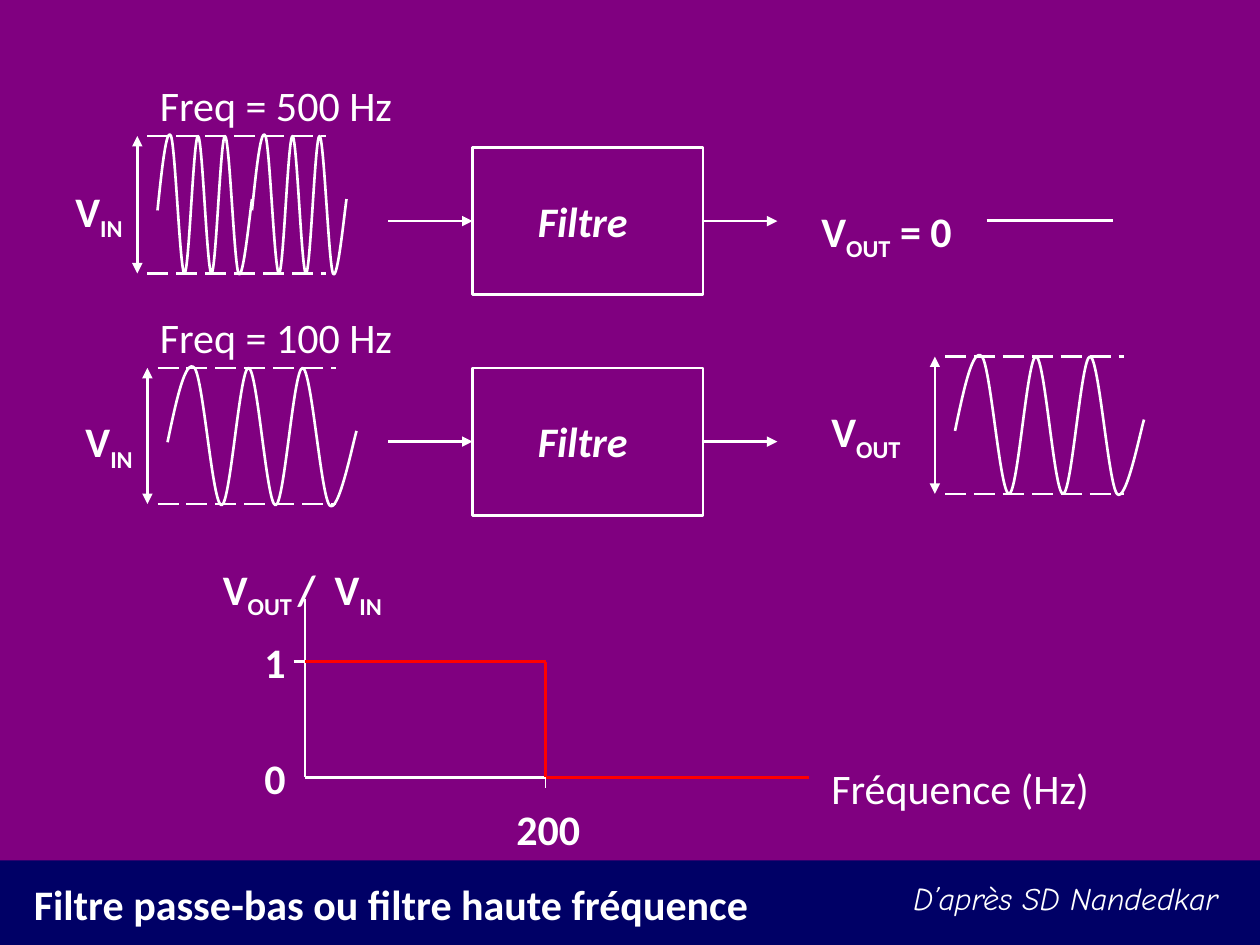
from dataclasses import dataclass

from lxml import etree
from pptx import Presentation
from pptx.dml.color import RGBColor
from pptx.enum.dml import MSO_LINE
from pptx.enum.shapes import MSO_CONNECTOR, MSO_SHAPE
from pptx.enum.text import MSO_AUTO_SIZE
from pptx.oxml.ns import qn
from pptx.util import Inches, Pt

STRAIGHT = MSO_CONNECTOR.STRAIGHT
RECTANGLE = MSO_SHAPE.RECTANGLE
LONG_DASH = MSO_LINE.LONG_DASH
GROW = MSO_AUTO_SIZE.SHAPE_TO_FIT_TEXT
WHITE, RED, PURPLE, NAVY = "FFFFFF", "FF0000", "800080", "000066"
LEFT_SIDE, RIGHT_SIDE = 1, 3
FILTER_HEIGHT = 1.17
WAVE_START = 0.67
HALF_CYCLES = 7
WAVE_CURVES = [
    ((0.33, 0.33), (0.67, 0), (1, 0.08)),
    ((1.33, 0.17), (1.67, 1.17), (2, 1.17)),
    ((2.33, 1.17), (2.67, 0.08), (3, 0.08)),
    ((3.33, 0.08), (3.67, 1.17), (4, 1.17)),
    ((4.33, 1.17), (4.67, 0.08), (5, 0.08)),
    ((5.33, 0.08), (5.67, 1.08), (6, 1.17)),
    ((6.33, 1.25), (6.86, 0.68), (7, 0.58)),
]


@dataclass
class TextRun:
    """A piece of a label, normal or subscript."""

    text: str
    subscript: bool = False


@dataclass
class Label:
    """A text box with its place and type style."""

    left: float
    top: float
    width: float
    runs: list[TextRun]
    height: float = 0.5
    bold: bool = True
    italic: bool = False
    size: int = 24
    font: str = "Calibri"
    wrap: bool = True


@dataclass
class Signal:
    """A wave between dashed limits with an amplitude arrow."""

    left: float
    top: float
    bottom: float
    waves: int = 1


@dataclass
class Segment:
    """A straight line with its colour and weight."""

    start: tuple[float, float]
    end: tuple[float, float]
    color: str = WHITE
    weight: float = 1.5


def color_of(value: str) -> RGBColor:
    """Turn a hex string into a colour."""
    return RGBColor.from_string(value)


def style_line(line, color: str = WHITE, weight: float = 1.5) -> None:
    """Set the colour and weight of a line."""
    line.color.rgb = color_of(color)
    line.width = Pt(weight)


def add_line(slide, segment: Segment, ends: tuple[str, ...] = (), dashed: bool = False):
    """Draw a straight connector with optional arrowheads and dashes."""
    points = [Inches(value) for value in (*segment.start, *segment.end)]
    connector = slide.shapes.add_connector(STRAIGHT, *points)
    style_line(connector.line, segment.color, segment.weight)
    if dashed:
        connector.line.dash_style = LONG_DASH
    properties = connector.line._get_or_add_ln()
    for end in ends:
        etree.SubElement(properties, qn(f"a:{end}"), type="triangle")
    etree.SubElement(connector._element.spPr, qn("a:effectLst"))
    return connector


def add_label(slide, label: Label) -> None:
    """Write a label run by run."""
    place = (label.left, label.top, label.width, label.height)
    box = slide.shapes.add_textbox(*map(Inches, place))
    box.text_frame.word_wrap = label.wrap
    box.text_frame.auto_size = GROW
    paragraph = box.text_frame.paragraphs[0]
    for part in label.runs:
        run = paragraph.add_run()
        run.text = part.text
        run.font.name = label.font
        run.font.size = Pt(label.size)
        run.font.bold = label.bold
        run.font.italic = label.italic
        run.font.color.rgb = color_of(WHITE)
        if part.subscript:
            run._r.get_or_add_rPr().set("baseline", "-25000")


def bend_segments(shape) -> None:
    """Turn each three straight segments of an outline into one cubic curve."""
    outline = next(shape._element.iter(qn("a:path")))
    segments = outline.findall(qn("a:lnTo"))
    for first in range(0, len(segments), 3):
        curve = etree.SubElement(outline, qn("a:cubicBezTo"))
        for segment in segments[first : first + 3]:
            curve.append(segment[0])
            outline.remove(segment)


def add_wave(shapes, left: float, top: float, width: float) -> None:
    """Draw one open wave."""
    scale = width / HALF_CYCLES
    builder = shapes.build_freeform(Inches(left), Inches(top + WAVE_START))
    points = [
        (Inches(left + x * scale), Inches(top + y))
        for curve in WAVE_CURVES
        for x, y in curve
    ]
    builder.add_line_segments(points, close=False)
    wave = builder.convert_to_shape()
    bend_segments(wave)
    wave.shadow.inherit = False
    wave.fill.background()
    style_line(wave.line)


def add_signal(slide, signal: Signal) -> None:
    """Draw the limits, the amplitude arrow and the waves."""
    left, top, bottom = signal.left, signal.top, signal.bottom
    for y in (top, bottom):
        add_line(slide, Segment((left, y), (left + 1.42, y)), dashed=True)
    arrow = Segment((left - 0.08, top), (left - 0.08, bottom))
    add_line(slide, arrow, ends=("headEnd", "tailEnd"))
    shapes = slide.shapes
    if signal.waves > 1:
        shapes = shapes.add_group_shape().shapes
    width = 1.5 / signal.waves
    for index in range(signal.waves):
        add_wave(shapes, left + 0.08 + index * width, top - 0.08, width)


def add_rectangle(slide, left: float, top: float, width: float, height: float):
    """Add a rectangle without a shadow."""
    place = map(Inches, (left, top, width, height))
    rectangle = slide.shapes.add_shape(RECTANGLE, *place)
    rectangle.shadow.inherit = False
    return rectangle


def add_filter(slide, top: float, label_width: float) -> None:
    """Draw a filter box with its input and output arrows."""
    box = add_rectangle(slide, 3.75, top, 1.83, FILTER_HEIGHT)
    box.fill.background()
    style_line(box.line)
    middle = top + FILTER_HEIGHT / 2
    tail = ("tailEnd",)
    incoming = add_line(slide, Segment((3.08, middle), (3.75, middle)), ends=tail)
    incoming.end_connect(box, LEFT_SIDE)
    outgoing = add_line(slide, Segment((5.58, middle), (6.17, middle)), ends=tail)
    outgoing.begin_connect(box, RIGHT_SIDE)
    name = [TextRun("Filtre")]
    add_label(slide, Label(4.17, top + 0.33, label_width, name, italic=True))


def main() -> None:
    """Build the low-pass filter slide."""
    presentation = Presentation()
    presentation.slide_width, presentation.slide_height = Inches(10), Inches(7.5)
    slide = presentation.slides.add_slide(presentation.slide_layouts[6])
    slide.background.fill.solid()
    slide.background.fill.fore_color.rgb = color_of(NAVY)
    panel = add_rectangle(slide, 0, 0, 10, 6.83)
    panel.fill.solid()
    panel.fill.fore_color.rgb = color_of(PURPLE)
    panel.line.fill.background()

    add_filter(slide, 1.17, 1.24)
    add_filter(slide, 2.92, 1.32)
    for signal in (
        Signal(1.17, 1.08, 2.17, waves=2),
        Signal(1.25, 2.92, 4),
        Signal(7.5, 2.83, 3.92),
    ):
        add_signal(slide, signal)
    for segment in (
        Segment((7.83, 1.75), (8.83, 1.75)),
        Segment((2.42, 4.75), (2.42, 6.17)),
        Segment((2.42, 6.17), (6.42, 6.17)),
        Segment((2.33, 5.25), (2.5, 5.25)),
        Segment((4.33, 6.08), (4.33, 6.25), weight=0.75),
        Segment((4.33, 6.17), (4.33, 5.25), RED),
        Segment((2.42, 5.25), (4.33, 5.25), RED),
        Segment((6.42, 6.17), (4.33, 6.17), RED),
    ):
        add_line(slide, segment)

    volt, sub_in, sub_out = TextRun("V"), TextRun("IN", True), TextRun("OUT", True)
    ratio = [volt, TextRun("OUT ", True), TextRun("/  V"), sub_in]
    credit = [TextRun("D’après SD Nandedkar")]
    for label in (
        Label(0.17, 6.92, 8.58, [TextRun("Filtre passe-bas ou filtre haute fréquence")]),
        Label(1.17, 0.58, 2.83, [TextRun("Freq = 500 Hz")], bold=False),
        Label(1.17, 2.42, 2.79, [TextRun("Freq = 100 Hz")], bold=False),
        Label(0.5, 1.42, 0.93, [volt, sub_in]),
        Label(0.58, 3.25, 1.06, [volt, sub_in]),
        Label(6.42, 1.58, 1.93, [volt, sub_out, TextRun(" = 0")]),
        Label(6.5, 3.17, 1.54, [volt, sub_out]),
        Label(1.67, 4.42, 2.22, ratio),
        Label(2, 5, 0.33, [TextRun("1")], 0.91),
        Label(2, 5.92, 0.33, [TextRun("0")], 0.91),
        Label(4, 6.33, 1.54, [TextRun("200")]),
        Label(6.5, 6, 3.5, [TextRun("Fréquence (Hz)")], bold=False),
        Label(7.15, 6.93, 2.96, credit, 0.4, False, True, 18, "Comic Neue", False),
    ):
        add_label(slide, label)
    presentation.save("out.pptx")


if __name__ == "__main__":
    main()
